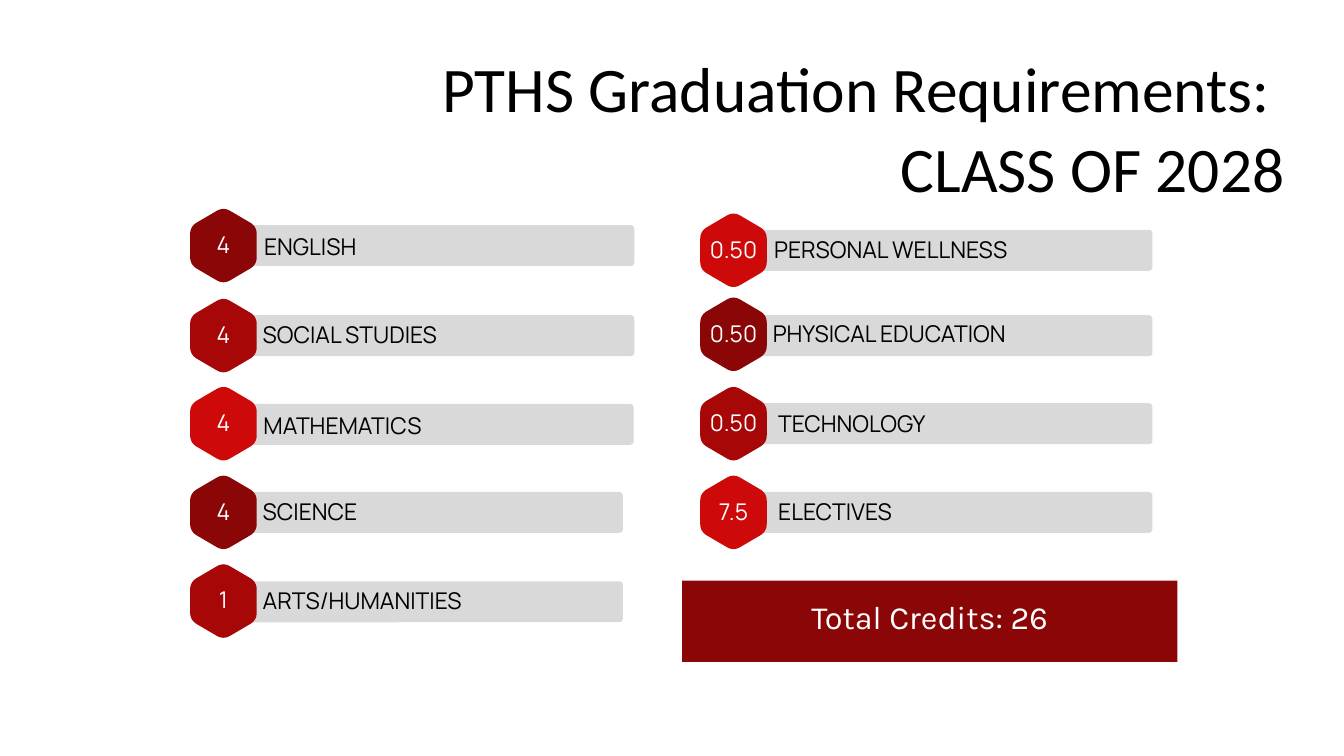
"""Build the graduation requirements slide."""
from dataclasses import dataclass
from itertools import cycle

from pptx import Presentation
from pptx import util as u
from pptx.dml.color import RGBColor
from pptx.enum import shapes, text

SCALE = 9144
HEX_WIDTH, HEX_HEIGHT = 99, 111
BAR_WIDTH, BAR_HEIGHT = 594, 61
LABEL_HEIGHT = 49
INSET = 6


@dataclass(frozen=True)
class Theme:
    black: str = "000000"
    white: str = "FFFFFF"
    bar: str = "D9D9D9"
    dark: str = "8B0606"
    middle: str = "A80707"
    bright: str = "CD0909"
    title_font: str = "Calibri"
    label_font: str = "Manrope"
    total_font: str = "Karla"
    title_size: float = 68
    label_size: float = 24.7
    total_size: float = 34.7
    title_leading: float = 85.6
    label_leading: float = 34.6
    total_leading: float = 48.5


@dataclass(frozen=True)
class Requirement:
    credits: str
    subject: str
    hex_left: int
    hex_top: int
    bar_left: int
    bar_top: int
    label_left: int
    label_top: int
    label_width: int


THEME = Theme()
REQUIREMENTS = [
    Requirement("4", "ENGLISH", 283, 310, 350, 335, 393, 339, 307),
    Requirement("4", "SOCIAL STUDIES", 283, 444, 350, 469, 391, 470, 307),
    Requirement("4", "MATHEMATICS", 283, 575, 349, 601, 392, 605, 307),
    Requirement("4", "SCIENCE", 283, 707, 333, 732, 391, 734, 307),
    Requirement("1", "ARTS/HUMANITIES", 283, 839, 333, 865, 391, 866, 358),
    Requirement("0.50", "PERSONAL WELLNESS", 1042, 317, 1121, 342, 1152, 343, 400),
    Requirement("0.50", "PHYSICAL EDUCATION", 1042, 442, 1121, 469, 1150, 469, 602),
    Requirement("0.50", "TECHNOLOGY", 1042, 575, 1121, 600, 1158, 602, 400),
    Requirement("7.5", "ELECTIVES", 1042, 707, 1121, 732, 1158, 734, 400),
]


def px(*lengths: float) -> list[u.Emu]:
    """Turn px lengths into EMU."""
    return [u.Emu(round(length * SCALE)) for length in lengths]


def write(box, *lines: str, font: str, size: float, color: str, leading: float,
          align=text.PP_ALIGN.LEFT, anchor=text.MSO_ANCHOR.TOP,
          insets: tuple[int, int, int, int] = (0, 0, 0, 0)) -> None:
    """Fill a shape with one formatted paragraph for each line."""
    frame = box.text_frame
    frame.word_wrap = True
    frame.auto_size = text.MSO_AUTO_SIZE.NONE
    frame.vertical_anchor = anchor
    (frame.margin_left, frame.margin_top,
     frame.margin_right, frame.margin_bottom) = px(*insets)
    for index, line in enumerate(lines):
        para = frame.paragraphs[0] if index == 0 else frame.add_paragraph()
        para.alignment = align
        para.line_spacing = u.Pt(leading)
        para.space_before = u.Pt(0)
        span = para.add_run()
        span.text = line
        span.font.name = font
        span.font.size = u.Pt(size)
        span.font.color.rgb = RGBColor.from_string(color)


def paint(shape, color: str) -> None:
    """Give a shape a flat fill with no line or shadow."""
    shape.fill.solid()
    shape.fill.fore_color.rgb = RGBColor.from_string(color)
    shape.line.fill.background()
    shape.shadow.inherit = False


def hexagon_points(left: int, top: int, cut: float = 0.2,
                   steps: int = 8) -> list[tuple[float, float]]:
    """Trace a hexagon whose corners are rounded by quadratic curves."""
    middle = HEX_WIDTH / 2
    corners = [(middle, -2), (HEX_WIDTH, 27), (HEX_WIDTH, 84),
               (middle, 113), (0, 84), (0, 27)]
    points = []
    for index, (x, y) in enumerate(corners):
        before, after = corners[index - 1], corners[(index + 1) % 6]
        for step in range(steps + 1):
            t = step / steps
            back, ahead = cut * (1 - t) ** 2, cut * t ** 2
            points.append((left + x + back * (before[0] - x) + ahead * (after[0] - x),
                           top + y + back * (before[1] - y) + ahead * (after[1] - y)))
    return points


def draw_bar(page, item: Requirement) -> None:
    """Draw the rounded grey bar of a requirement."""
    bar = page.shapes.add_shape(shapes.MSO_SHAPE.ROUNDED_RECTANGLE,
                                *px(item.bar_left, item.bar_top, BAR_WIDTH, BAR_HEIGHT))
    bar.adjustments[0] = 0.09
    paint(bar, THEME.bar)


def draw_badge(page, item: Requirement, color: str) -> None:
    """Draw the hexagon that holds the credits."""
    start, *others = [px(*point) for point in hexagon_points(item.hex_left, item.hex_top)]
    builder = page.shapes.build_freeform(*start, scale=1.0)
    builder.add_line_segments(others, close=True)
    badge = builder.convert_to_shape()
    paint(badge, color)
    write(badge, item.credits, font=THEME.label_font, size=THEME.label_size,
          color=THEME.white, leading=THEME.label_leading, align=text.PP_ALIGN.CENTER,
          anchor=text.MSO_ANCHOR.MIDDLE, insets=(INSET, INSET, INSET, INSET + 11))


def draw_label(page, item: Requirement) -> None:
    """Write the subject over its bar."""
    label = page.shapes.add_textbox(
        *px(item.label_left, item.label_top, item.label_width, LABEL_HEIGHT))
    write(label, item.subject, font=THEME.label_font, size=THEME.label_size,
          color=THEME.black, leading=THEME.label_leading)


def draw_title(page) -> None:
    """Place the two-line title."""
    title = page.shapes.title
    title.left, title.top, title.width, title.height = px(464, 68, 1448, 236)
    write(title, "PTHS Graduation Requirements: ", "CLASS OF 2028",
          font=THEME.title_font, size=THEME.title_size, color=THEME.black,
          leading=THEME.title_leading, align=text.PP_ALIGN.RIGHT)


def draw_total(page) -> None:
    """Draw the box with the total credits."""
    total = page.shapes.add_shape(shapes.MSO_SHAPE.RECTANGLE, *px(1015, 864, 737, 121))
    paint(total, THEME.dark)
    write(total, "Total Credits: 26", font=THEME.total_font, size=THEME.total_size,
          color=THEME.white, leading=THEME.total_leading, align=text.PP_ALIGN.CENTER,
          anchor=text.MSO_ANCHOR.MIDDLE, insets=(INSET, INSET, INSET, INSET + 25))


def main() -> None:
    """Build and save the deck."""
    deck = Presentation()
    deck.slide_width, deck.slide_height = px(2000, 1125)
    page = deck.slides.add_slide(deck.slide_layouts[5])
    draw_title(page)
    reds = cycle((THEME.dark, THEME.middle, THEME.bright))
    for item, red in zip(REQUIREMENTS, reds):
        draw_bar(page, item)
        draw_badge(page, item, red)
        draw_label(page, item)
    draw_total(page)
    deck.save("out.pptx")


if __name__ == "__main__":
    main()
